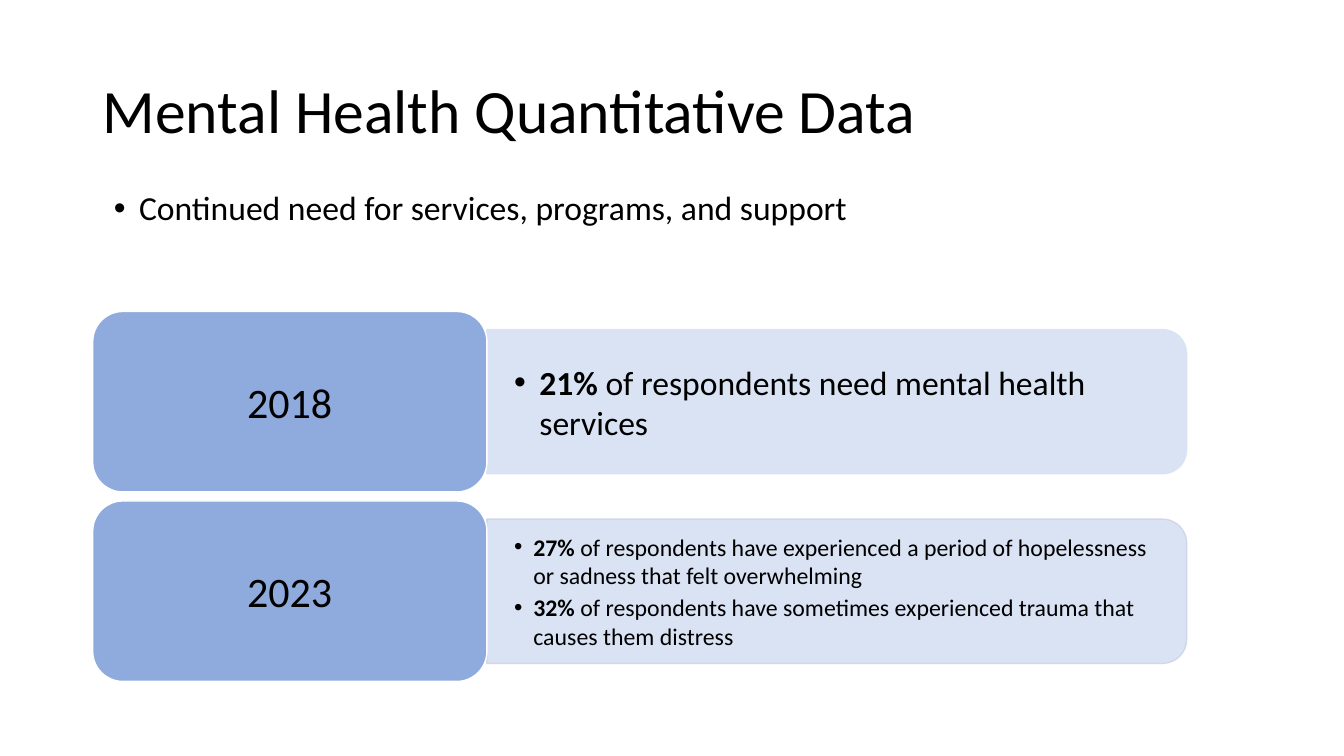
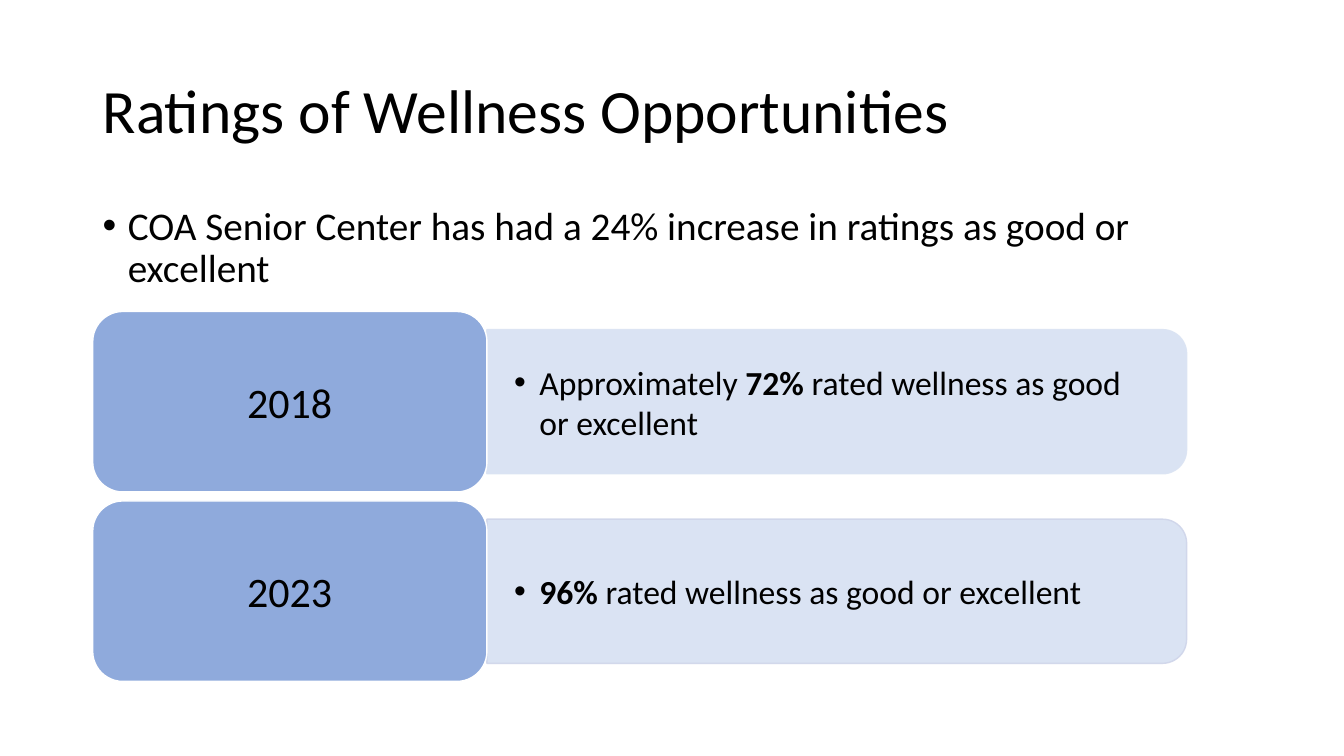
from dataclasses import dataclass

from lxml.etree import SubElement
from pptx import Presentation
from pptx.dml.color import RGBColor
from pptx.enum.shapes import MSO_SHAPE
from pptx.enum.text import MSO_ANCHOR, PP_ALIGN
from pptx.oxml.ns import qn
from pptx.util import Inches, Pt


@dataclass(frozen=True)
class Theme:
    font: str = "Calibri"
    ink: str = "000000"
    tile: str = "8FAADC"
    edge: str = "FFFFFF"
    bar: str = "DAE3F3"
    rims: tuple = ("DAE3F3", "CFD5EA")
    title: int = 44
    year: int = 30
    large: int = 28
    mid: int = 24
    small: int = 17


THEME = Theme()
WIDE, HIGH = Inches(13.33), Inches(7.5)

# Grid, in percent of the slide's width and height
LEFT, SPAN = 6.9, 86.27
TILE_W, TILE_H = 29.33, 23.87
BAR_W, BAR_H = 52.06, 19.07
TOP, STEP = 41.2, 25.07

# Text frame and paragraph formats
PLAIN = {"word_wrap": True}
MIDDLE = {"word_wrap": True, "vertical_anchor": MSO_ANCHOR.MIDDLE}
PADDED = MIDDLE | {
    "margin_left": Inches(0.27), "margin_right": Inches(0.27),
    "margin_top": Inches(0.14), "margin_bottom": Inches(0.14),
}
TIGHT = {"line_spacing": 0.9}
LEAD = TIGHT | {"space_before": Pt(10)}
CENTER = {"alignment": PP_ALIGN.CENTER}


def place(x, y, w, h):
    """Turn percent shares of the slide into lengths."""
    return [int(part * side / 100)
            for part, side in zip((x, y, w, h), (WIDE, HIGH) * 2)]


def apply(item, style):
    for name, value in style.items():
        setattr(item, name, value)


def bullet(para, indent):
    props = para._p.get_or_add_pPr()
    props.set("marL", str(Inches(indent)))
    props.set("indent", str(-Inches(indent)))
    SubElement(props, qn("a:buFont"), typeface="Arial")
    SubElement(props, qn("a:buChar"), char="•")


def write(shape, lines, size, frame, style, indent=None):
    """Fill a shape with paragraphs; words between asterisks are bold."""
    text = shape.text_frame
    apply(text, frame)
    for row, line in enumerate(lines):
        para = text.add_paragraph() if row else text.paragraphs[0]
        apply(para, style)
        if indent:
            bullet(para, indent)
        for part, words in enumerate(line.split("*")):
            if words:
                run = para.add_run()
                run.text = words
                apply(run.font, {"name": THEME.font, "size": Pt(size),
                                 "bold": part % 2 == 1})
                run.font.color.rgb = RGBColor.from_string(THEME.ink)


def label(slide, area, *args, **more):
    write(slide.shapes.add_textbox(*place(*area)), *args, **more)


def block(slide, kind, area, fill, rim):
    shape = slide.shapes.add_shape(kind, *area)
    shape.shadow.inherit = False
    shape.fill.solid()
    shape.fill.fore_color.rgb = RGBColor.from_string(fill)
    shape.line.color.rgb = RGBColor.from_string(rim)
    shape.line.width = Pt(1)
    return shape


def band(slide, row, year, lines, size, indent):
    """Draw one year tile with its bar of findings."""
    top = TOP + row * STEP
    area = (LEFT + TILE_W, top + (TILE_H - BAR_H) / 2, BAR_W, BAR_H)
    x, y, w, h = place(*area)
    # The bar is an upright shape turned a quarter about its centre
    turned = (x + (w - h) // 2, y + (h - w) // 2, h, w)
    bar = block(slide, MSO_SHAPE.ROUND_2_SAME_RECTANGLE, turned,
                THEME.bar, THEME.rims[row])
    bar.rotation = 90
    color = bar.line.fill._xPr.find(".//" + qn("a:srgbClr"))
    SubElement(color, qn("a:alpha"), val="90000")
    label(slide, (*area[:2], BAR_W - 0.5, BAR_H), lines, size, PADDED,
          {"space_after": Pt(size * 0.15)}, indent=indent)
    # Year tile
    tile = block(slide, MSO_SHAPE.ROUNDED_RECTANGLE,
                 place(LEFT, top, TILE_W, TILE_H), THEME.tile, THEME.edge)
    write(tile, [year], THEME.year, MIDDLE, CENTER)


def page(deck, title, lead, size, spot, bands):
    slide = deck.slides.add_slide(deck.slide_layouts[6])
    label(slide, (LEFT, 5.33, SPAN, 19.33), [title], THEME.title,
          MIDDLE, TIGHT)
    label(slide, (*spot, SPAN, 11.33), [lead], size, PLAIN, LEAD, indent=0.25)
    for row, data in enumerate(bands):
        band(slide, row, *data)


def main():
    deck = Presentation()
    apply(deck, {"slide_width": WIDE, "slide_height": HIGH})
    # Need for mental health services
    page(deck, "Mental Health Quantitative Data",
         "Continued need for services, programs, and support",
         THEME.mid, (7.73, 24.67), [
             ("2018",
              ["*21%* of respondents need mental health services"],
              THEME.mid, 0.25),
             ("2023",
              ["*27%* of respondents have experienced a period of "
               "hopelessness or sadness that felt overwhelming",
               "*32%* of respondents have sometimes experienced trauma "
               "that causes them distress"],
              THEME.small, 0.19),
         ])
    # Wellness ratings
    page(deck, "Ratings of Wellness Opportunities",
         "COA Senior Center has had a 24% increase in ratings as good or "
         "excellent",
         THEME.large, (LEFT, 26.67), [
             ("2018",
              ["Approximately *72%* rated wellness as good or excellent"],
              THEME.mid, 0.25),
             ("2023", ["*96% *rated wellness as good or excellent"],
              THEME.mid, 0.25),
         ])
    deck.save("out.pptx")


if __name__ == "__main__":
    main()
